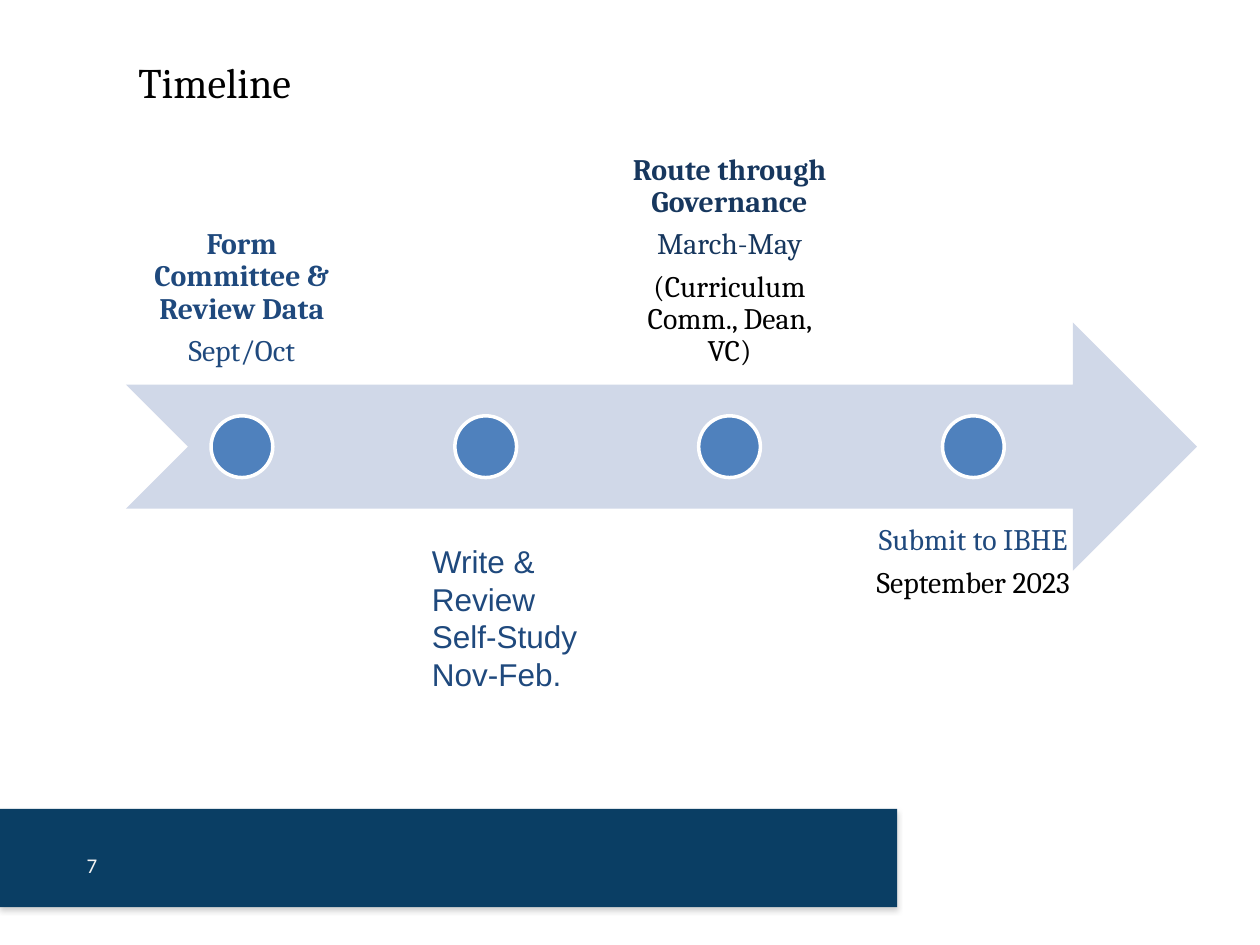
from lxml import etree
from pptx import Presentation
from pptx.dml.color import RGBColor
from pptx.enum.shapes import MSO_SHAPE as Shape
from pptx.enum.text import MSO_ANCHOR as Anchor, PP_ALIGN as Align
from pptx.oxml import parse_xml
from pptx.oxml.ns import nsdecls
from pptx.util import Inches, Pt

NAVY, BLUE, DEEP, BLACK = "0A3E64", "1F497D", "17375E", "000000"

# Each step: label side, then lines of (text, colour, bold)
STEPS = [
    ("above", [("Form Committee & Review Data", BLUE, True),
               ("Sept/Oct", BLUE, False)]),
    (None, []),
    ("above", [("Route through Governance", DEEP, True),
               ("March-May", DEEP, False),
               ("(Curriculum Comm., Dean, VC)", BLACK, False)]),
    ("below", [("Submit to IBHE", BLUE, False),
               ("September 2023", BLACK, False)]),
]


def rgb(code):
    return RGBColor.from_string(code)


def add_form(slide, kind, box, fill, line=None):
    form = slide.shapes.add_shape(kind, *map(Inches, box))
    form.shadow.inherit = False
    form.fill.solid()
    form.fill.fore_color.rgb = rgb(fill)
    if line:
        form.line.color.rgb = rgb(line)
        form.line.width = Pt(2)
    else:
        form.line.fill.background()
    return form


def add_text(slide, box, lines, font, size, anchor=Anchor.TOP,
             align=Align.LEFT, inset=None, gap=0, space=1.0):
    frame = slide.shapes.add_textbox(*map(Inches, box)).text_frame
    frame.word_wrap = True
    frame.vertical_anchor = anchor
    if inset is not None:
        frame.margin_left = frame.margin_right = Inches(inset)
        frame.margin_top = frame.margin_bottom = Inches(inset)
    frame.text = "\n".join(text for text, _, _ in lines)
    for para, (_, color, bold) in zip(frame.paragraphs, lines):
        para.alignment = align
        para.line_spacing = space
        para.space_after = Pt(gap)
        for run in para.runs:
            run.font.name = font
            run.font.size = Pt(size)
            run.font.bold = bold
            run.font.color.rgb = rgb(color)


def add_footer(slide, box):
    """Dark bar with a soft shadow and the page number."""
    left, top, _, _ = box
    bar = add_form(slide, Shape.RECTANGLE, box, NAVY)
    glow = parse_xml(
        f'<a:outerShdw {nsdecls("a")} blurRad="{Pt(3.1)}" dist="{Pt(1.8)}" '
        'dir="5400000" rotWithShape="0"><a:srgbClr val="808080">'
        '<a:alpha val="35000"/></a:srgbClr></a:outerShdw>')
    bar.element.spPr.find("{*}effectLst").append(glow)
    add_text(slide, (left + 0.12, top + 0.25, 0.75, 0.4),
             [("7", "F2F2F2", False)], "Calibri", 12,
             Anchor.MIDDLE, Align.RIGHT)


def add_line(slide, box):
    """Arrow with evenly spaced dots and labels above or below."""
    left, top, width, height = box
    add_form(slide, Shape.NOTCHED_RIGHT_ARROW, box, "D0D8E8")
    dot, wide = 0.49, 1.84
    pitch = (width * 0.9 + 0.09) / len(STEPS)
    for i, (side, lines) in enumerate(STEPS):
        mid = left + wide / 2 + i * pitch
        add_form(slide, Shape.OVAL,
                 (mid - dot / 2, top + (height - dot) / 2, dot, dot),
                 "4F81BD", "FFFFFF")
        if side:
            shift = -0.75 * height if side == "above" else 0.75 * height
            anchor = Anchor.BOTTOM if side == "above" else Anchor.TOP
            add_text(slide, (mid - wide / 2, top + shift, wide, height),
                     lines, "Cambria", 17, anchor, Align.CENTER,
                     inset=0.13, gap=6, space=0.9)


def main():
    deck = Presentation()
    deck.slide_width, deck.slide_height = Inches(10), Inches(7.5)
    slide = deck.slides.add_slide(deck.slide_layouts[6])
    add_footer(slide, (0, 6.42, 7.12, 0.78))
    # Title
    add_text(slide, (1, 0.3, 8.5, 0.7), [("Timeline", BLACK, False)],
             "Cambria", 24, Anchor.MIDDLE)
    add_line(slide, (1, 2.56, 8.5, 1.97))
    # Note under the second dot
    note = ["Write & Review", "Self-Study", "Nov-Feb."]
    add_text(slide, (3.33, 4.25, 1.42, 1.31),
             [(text, BLUE, False) for text in note], "Arial", 18)
    deck.save("out.pptx")


if __name__ == "__main__":
    main()
